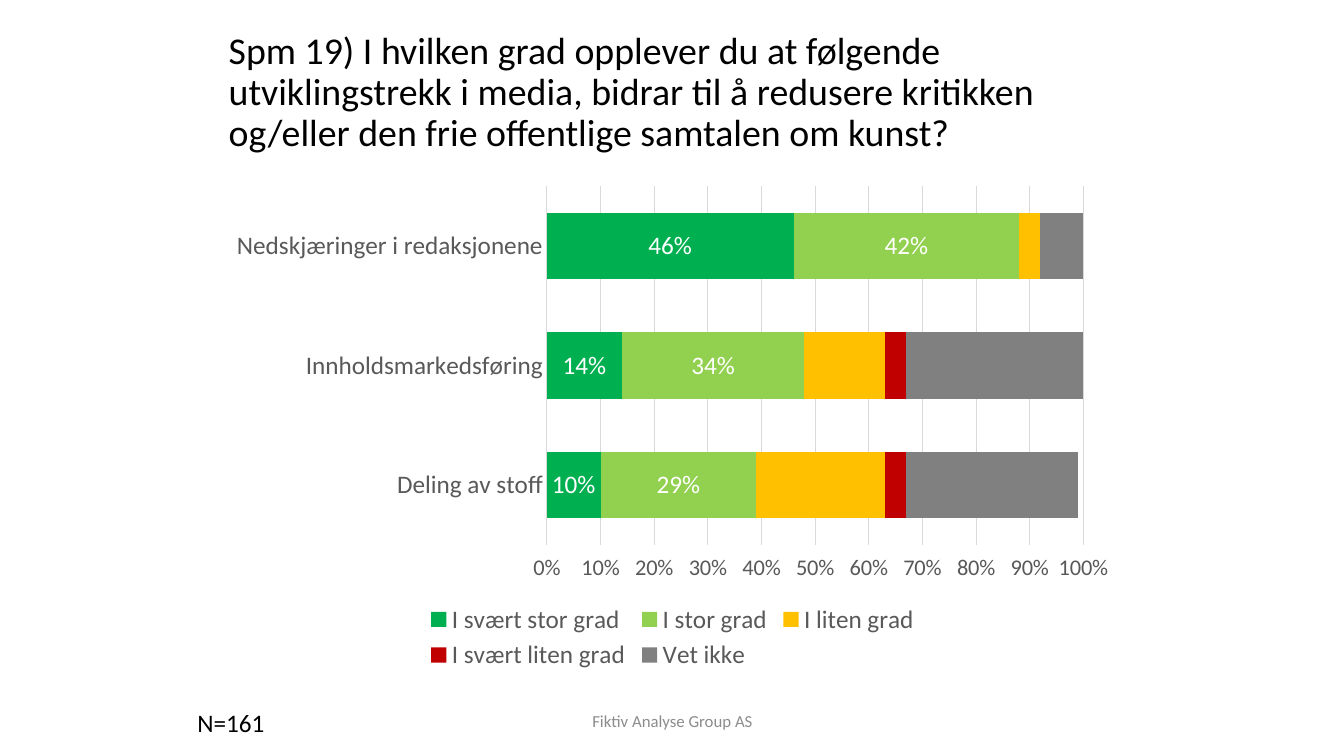
from pptx import Presentation
from pptx.chart.data import CategoryChartData
from pptx.dml.color import RGBColor
from pptx.enum.chart import XL_CHART_TYPE, XL_LEGEND_POSITION, XL_TICK_LABEL_POSITION, XL_TICK_MARK
from pptx.enum.text import MSO_ANCHOR, PP_ALIGN
from pptx.util import Inches, Pt

BAR_STACKED = XL_CHART_TYPE.BAR_STACKED
BOTTOM = XL_LEGEND_POSITION.BOTTOM
HIGH = XL_TICK_LABEL_POSITION.HIGH
NO_TICK = XL_TICK_MARK.NONE
TOP, MIDDLE = MSO_ANCHOR.TOP, MSO_ANCHOR.MIDDLE
LEFT, CENTER = PP_ALIGN.LEFT, PP_ALIGN.CENTER

CATEGORIES = ["Nedskjæringer i redaksjonene", "Innholdsmarkedsføring", "Deling av stoff"]
# name, values, colour, labelled
SERIES = [
    ("I svært stor grad ", (0.46, 0.14, 0.10), "00B050", True),
    ("I stor grad", (0.42, 0.34, 0.29), "92D050", True),
    ("I liten grad", (0.04, 0.15, 0.24), "FFC000", False),
    ("I svært liten grad", (0, 0.04, 0.04), "C00000", False),
    ("Vet ikke", (0.08, 0.34, 0.32), "808080", False),
]


def rgb(color):
    return RGBColor.from_string(color)


class SlideBuilder:
    FONT = "Calibri"
    BLACK, GREY, GRID, WHITE = "000000", "595959", "D9D9D9", "FFFFFF"

    def __init__(self, prs):
        self.s = prs.slides.add_slide(prs.slide_layouts[6])

    def style(self, font, size, color):
        font.name = self.FONT
        font.size = Pt(size)
        font.color.rgb = rgb(color)

    def line(self, fmt):
        fmt.line.color.rgb = rgb(self.GRID)
        fmt.line.width = Pt(0.75)

    def text(self, box, text, size, color=BLACK, align=LEFT, anchor=TOP, wrap=True, spacing=1.0):
        tf = self.s.shapes.add_textbox(*map(Inches, box)).text_frame
        tf.word_wrap = wrap
        tf.vertical_anchor = anchor
        p = tf.paragraphs[0]
        p.alignment = align
        p.line_spacing = spacing
        r = p.add_run()
        r.text = text
        self.style(r.font, size, color)

    def stacked_bars(self, box, categories, series):
        data = CategoryChartData(number_format="0%")
        data.categories = categories
        for name, values, _, _ in series:
            data.add_series(name, values)
        chart = self.s.shapes.add_chart(BAR_STACKED, *map(Inches, box), data).chart
        self.style(chart.font, 18, self.BLACK)
        chart.has_title = False
        chart.has_legend = True
        chart.legend.position = BOTTOM
        chart.legend.include_in_layout = False
        self.style(chart.legend.font, 18, self.GREY)

        plot = chart.plots[0]
        plot.gap_width = 80
        plot.overlap = 100
        plot.vary_by_categories = False
        for ser, (_, _, color, labelled) in zip(plot.series, series):
            ser.format.fill.solid()
            ser.format.fill.fore_color.rgb = rgb(color)
            if labelled:
                labels = ser.data_labels
                labels.show_value = True
                labels.number_format = "0%"
                labels.number_format_is_linked = False
                self.style(labels.font, 18, self.WHITE)
        self.axes(chart.category_axis, chart.value_axis)

    def axes(self, cat, val):
        """Put the first category on top and the percent scale at the bottom."""
        for axis, size in ((cat, 18), (val, 16)):
            axis.major_tick_mark = axis.minor_tick_mark = NO_TICK
            self.style(axis.tick_labels.font, size, self.GREY)
        cat.reverse_order = True
        self.line(cat.format)
        val.tick_label_position = HIGH
        val.minimum_scale, val.maximum_scale, val.major_unit = 0, 1, 0.1
        val.tick_labels.number_format = "0%"
        val.tick_labels.number_format_is_linked = False
        val.format.line.fill.background()
        val.has_major_gridlines = True
        self.line(val.major_gridlines.format)


def main():
    prs = Presentation()
    prs.slide_width, prs.slide_height = Inches(13.33), Inches(7.5)
    slide = SlideBuilder(prs)
    slide.text((2.17, 0.3, 9.22, 1.25),
               "Spm 19) I hvilken grad opplever du at følgende utviklingstrekk i media, "
               "bidrar til å redusere kritikken og/eller den frie offentlige samtalen om kunst?",
               27, anchor=MIDDLE, spacing=0.9)
    slide.stacked_bars((2.17, 1.75, 9, 4.95), CATEGORIES, SERIES)
    slide.text((4.42, 6.95, 4.5, 0.4), "Fiktiv Analyse Group AS", 12, "8C8C8C", CENTER, MIDDLE)
    slide.text((1.86, 6.97, 0.87, 0.4), "N=161", 18, wrap=False)
    prs.save("out.pptx")


if __name__ == "__main__":
    main()
